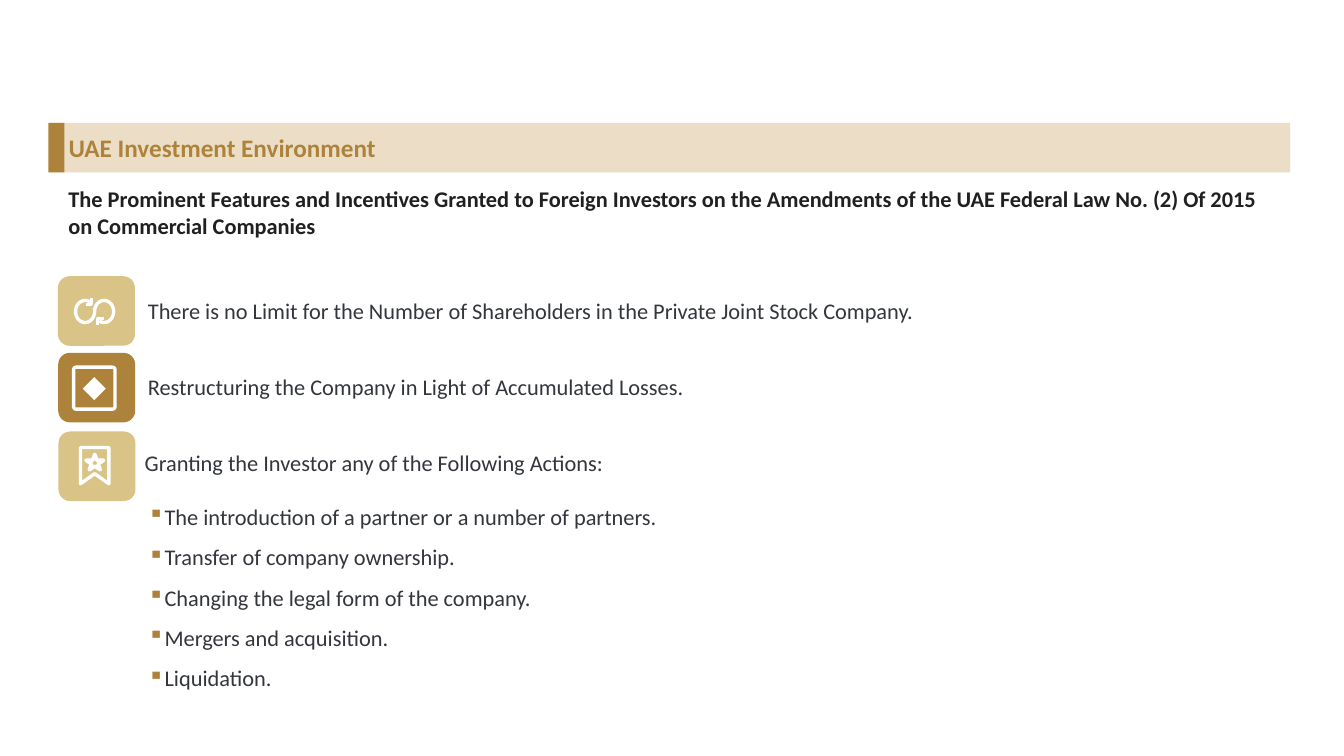
import math

import pptx
import pptx.dml.color
import pptx.enum.shapes
import pptx.enum.text
import pptx.oxml
import pptx.oxml.ns
import pptx.util

Pt = pptx.util.Pt
MSO_SHAPE = pptx.enum.shapes.MSO_SHAPE
GOLD, LIGHT_GOLD, CREAM, WHITE = "AD833B", "DAC386", "ECDEC6", "FFFFFF"
BLACK, GREY = "202020", "33363C"

deck = pptx.Presentation()
deck.slide_width, deck.slide_height = Pt(960), Pt(540)
slide = deck.slides.add_slide(deck.slide_layouts[5])
shapes = slide.shapes


def paint(shape, fill=None, stroke=None, width=1):
    """Set fill and outline; None leaves that part empty."""
    shape.shadow.inherit = False
    for part, color in ((shape.fill, fill), (shape.line.fill, stroke)):
        if color:
            part.solid()
            part.fore_color.rgb = pptx.dml.color.RGBColor.from_string(color)
        else:
            part.background()
    if stroke:
        shape.line.width = Pt(width)


def write(box, lines, size, color, bold=False):
    """Fill a text frame with one paragraph per line."""
    frame = box.text_frame
    frame.word_wrap = True
    frame.text = "\n".join(lines)
    font_values = {"name": "Calibri", "size": Pt(size), "bold": bold}
    for paragraph in frame.paragraphs:
        paragraph.alignment = pptx.enum.text.PP_ALIGN.LEFT
        for run in paragraph.runs:
            for key, value in font_values.items():
                setattr(run.font, key, value)
            run.font.color.rgb = pptx.dml.color.RGBColor.from_string(color)


# Heading band
for left, width, color in ((35.3, 886.3, CREAM), (34.6, 11.5, GOLD)):
    band = shapes.add_shape(MSO_SHAPE.RECTANGLE, Pt(left), Pt(87.8), Pt(width), Pt(35.3))
    paint(band, color)

heading = shapes.title
heading_place = {"left": Pt(41.8), "top": Pt(91), "width": Pt(400), "height": Pt(29)}
for key, value in heading_place.items():
    setattr(heading, key, value)
write(heading, ["UAE Investment Environment"], 18, GOLD, bold=True)
heading.text_frame.vertical_anchor = pptx.enum.text.MSO_ANCHOR.MIDDLE
heading.element.getparent().append(heading.element)

subtitle = shapes.add_textbox(Pt(41.8), Pt(129), Pt(875.5), Pt(46))
write(subtitle, ["The Prominent Features and Incentives Granted to Foreign Investors on the "
                 "Amendments of the UAE Federal Law No. (2) Of 2015 on Commercial Companies"],
      16, BLACK, bold=True)

# Features with their icon tiles
features = [
    (41.4, 197.3, LIGHT_GOLD, 98.6, 208.8,
     "There is no Limit for the Number of Shareholders in the Private Joint Stock Company."),
    (41.6, 252, GOLD, 98.6, 263,
     "Restructuring the Company in Light of Accumulated Losses."),
    (41.8, 308.2, LIGHT_GOLD, 96.3, 317,
     "Granting the Investor any of the Following Actions:"),
]
for tile_left, tile_top, color, text_left, text_top, sentence in features:
    tile = shapes.add_shape(MSO_SHAPE.ROUNDED_RECTANGLE, Pt(tile_left), Pt(tile_top),
                            Pt(55), Pt(49.7))
    paint(tile, color)
    feature = shapes.add_textbox(Pt(text_left), Pt(text_top), Pt(740), Pt(26.6))
    write(feature, [sentence], 16, GREY)

# Line icons: endless loop with two arrow hooks, and a ribbon
left_loop = [(60.8 + 6.8 * math.cos(math.radians(a)), 222.5 - 7.9 * math.sin(math.radians(a)))
             for a in range(60, 361, 10)]
right_loop = [(74.4 + 6.8 * math.cos(math.radians(a)), 222.5 - 7.9 * math.sin(math.radians(a)))
              for a in range(180, -121, -10)]
icon_lines = [
    (left_loop + right_loop, False),
    ([(61.2, 217.4), (65.5, 217.4), (65.5, 213.1)], False),
    ([(74, 227.6), (69.7, 227.6), (69.7, 231.9)], False),
    ([(57.5, 319.7), (77.8, 319.7), (77.8, 345.6), (67.7, 338.4), (57.5, 345.6)], True),
]
for points, closed in icon_lines:
    (start_x, start_y), *rest = points
    builder = shapes.build_freeform(Pt(start_x), Pt(start_y))
    builder.add_line_segments([(Pt(x), Pt(y)) for x, y in rest], close=closed)
    paint(builder.convert_to_shape(), stroke=WHITE, width=2.4)

star = shapes.add_shape(MSO_SHAPE.STAR_5_POINT, Pt(61.4), Pt(324.6), Pt(12.6), Pt(11))
paint(star, stroke=WHITE, width=2.6)
frame_icon = shapes.add_shape(MSO_SHAPE.ROUNDED_RECTANGLE, Pt(52.6), Pt(262.3), Pt(29.6), Pt(30))
frame_icon.adjustments[0] = 0.06
paint(frame_icon, stroke=WHITE, width=2.4)
core = shapes.add_shape(MSO_SHAPE.DIAMOND, Pt(59.2), Pt(269.4), Pt(16.4), Pt(16.4))
paint(core, WHITE)

# Possible actions
actions = shapes.add_textbox(Pt(98.6), Pt(346.3), Pt(612.7), Pt(152.6))
write(actions, [
    "The introduction of a partner or a number of partners.",
    "Transfer of company ownership.",
    "Changing the legal form of the company.",
    "Mergers and acquisition.",
    "Liquidation.",
], 16, GREY)
for action in actions.text_frame.paragraphs:
    action.alignment = pptx.enum.text.PP_ALIGN.JUSTIFY
    action.line_spacing = 1.5
    properties = action._p.get_or_add_pPr()
    properties.set("marL", "0")
    properties.set("indent", str(-Pt(27)))
    for bullet in (f'<a:buClr %s><a:srgbClr val="{GOLD}"/></a:buClr>', '<a:buChar %s char="▪"/>'):
        properties.append(pptx.oxml.parse_xml(bullet % pptx.oxml.ns.nsdecls("a")))

deck.save("out.pptx")
